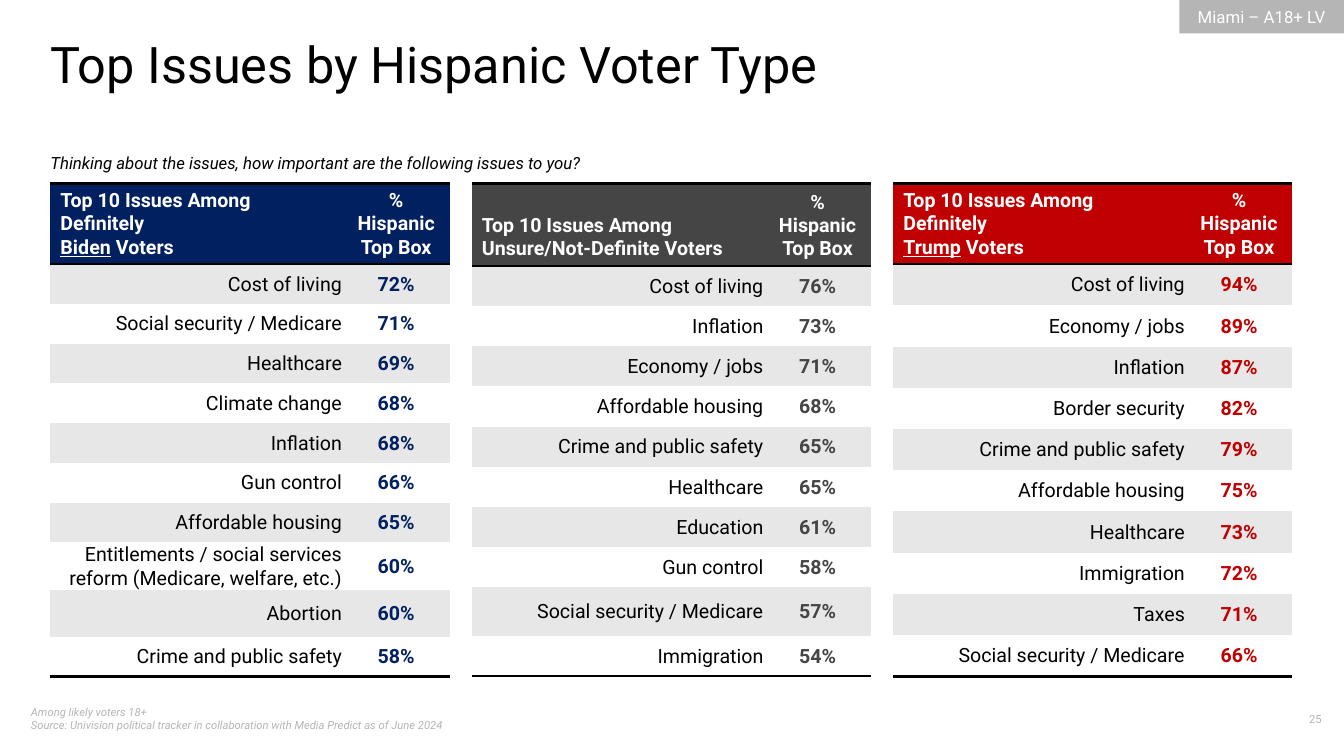
from lxml import etree
from pptx import Presentation
from pptx.dml.color import RGBColor
from pptx.enum.shapes import MSO_SHAPE
from pptx.enum.text import MSO_ANCHOR, PP_ALIGN
from pptx.oxml.ns import qn
from pptx.util import Cm, Pt

LEFT, CENTER, RIGHT = PP_ALIGN.LEFT, PP_ALIGN.CENTER, PP_ALIGN.RIGHT
MIDDLE, BOTTOM = MSO_ANCHOR.MIDDLE, MSO_ANCHOR.BOTTOM
RECTANGLE = MSO_SHAPE.RECTANGLE
FONT = "Roboto"
NO_GRID_STYLE = "{2D5ABB26-0587-4C30-8999-92F81FD0307C}"
COLORS = {
    "black": "000000", "white": "FFFFFF", "band": "E7E7E7", "muted": "B5B5B5",
    "biden": "002060", "unsure": "454545", "trump": "C00000",
}

TAG = "Miami – A18+ LV"
TITLE = "Top Issues by Hispanic Voter Type"
QUESTION = "Thinking about the issues, how important are the following issues to you?"
FOOTNOTE = [
    "Among likely voters 18+",
    "Source: Univision political tracker in collaboration with Media Predict as of June 2024",
]
PAGE_NUMBER = "25"
SHARE_HEADING = ["% Hispanic", "Top Box"]

# "heights" holds the rows with a height of their own; the others share the rest.
GROUPS = [
    {
        "color": "biden",
        "heading": "Top 10 Issues Among Definitely",
        "candidate": "Biden",
        "heights": {0: 2.03, 8: 1.2, 9: 1.17},
        "issues": [
            ("Cost of living", "72%"),
            ("Social security / Medicare", "71%"),
            ("Healthcare", "69%"),
            ("Climate change", "68%"),
            ("Inflation", "68%"),
            ("Gun control", "66%"),
            ("Affordable housing", "65%"),
            ("Entitlements / social services reform (Medicare, welfare, etc.)", "60%"),
            ("Abortion", "60%"),
            ("Crime and public safety", "58%"),
        ],
    },
    {
        "color": "unsure",
        "heading": "Top 10 Issues Among Unsure/Not-Definite Voters",
        "candidate": None,
        "heights": {0: 2.08, 9: 1.22},
        "issues": [
            ("Cost of living", "76%"),
            ("Inflation", "73%"),
            ("Economy / jobs", "71%"),
            ("Affordable housing", "68%"),
            ("Crime and public safety", "65%"),
            ("Healthcare", "65%"),
            ("Education", "61%"),
            ("Gun control", "58%"),
            ("Social security / Medicare", "57%"),
            ("Immigration", "54%"),
        ],
    },
    {
        "color": "trump",
        "heading": "Top 10 Issues Among Definitely",
        "candidate": "Trump",
        "heights": {0: 2.03},
        "issues": [
            ("Cost of living", "94%"),
            ("Economy / jobs", "89%"),
            ("Inflation", "87%"),
            ("Border security", "82%"),
            ("Crime and public safety", "79%"),
            ("Affordable housing", "75%"),
            ("Healthcare", "73%"),
            ("Immigration", "72%"),
            ("Taxes", "71%"),
            ("Social security / Medicare", "66%"),
        ],
    },
]

TABLE_LEFT, TABLE_TOP, TABLE_HEIGHT = 1.27, 4.62, 12.42
COLUMN_WIDTHS = (7.37, 2.69)
TABLE_GAP = 0.56


def rgb(name):
    return RGBColor.from_string(COLORS[name])


def add_span(para, text, size, color, bold=False, italic=False, underline=False):
    span = para.add_run()
    span.text = text
    font = span.font
    font.name, font.size = FONT, Pt(size)
    font.bold, font.italic, font.underline = bold, italic, underline
    font.color.rgb = rgb(color)


def add_text(page, place, lines, size, color, align=LEFT, italic=False, inset=True):
    box = page.shapes.add_textbox(*map(Cm, place))
    frame = box.text_frame
    frame.word_wrap = True
    if not inset:
        frame.margin_left = frame.margin_right = 0
        frame.margin_top = frame.margin_bottom = 0
    para = frame.paragraphs[0]
    para.alignment = align
    for number, line in enumerate(lines):
        if number:
            para.add_line_break()
        add_span(para, line, size, color, italic=italic)


def add_tag(page):
    tag = page.shapes.add_shape(RECTANGLE, Cm(29.72), 0, Cm(4.15), Cm(0.84))
    tag.shadow.inherit = False
    tag.fill.solid()
    tag.fill.fore_color.rgb = rgb("muted")
    tag.line.fill.background()
    frame = tag.text_frame
    frame.vertical_anchor = MIDDLE
    para = frame.paragraphs[0]
    para.alignment = CENTER
    add_span(para, TAG, 12, "white")


def fill_cell(cell, paragraphs, align, anchor, background, borders):
    """Write paragraphs of (text, style) spans; borders names the sides to rule."""
    properties = cell._tc.get_or_add_tcPr()
    for side in borders:
        line = etree.SubElement(properties, qn(f"a:{side}"), w=str(Pt(2)))
        paint = etree.SubElement(line, qn("a:solidFill"))
        etree.SubElement(paint, qn("a:srgbClr"), val=COLORS["black"])
    cell.fill.solid()
    cell.fill.fore_color.rgb = rgb(background)
    cell.vertical_anchor = anchor
    frame = cell.text_frame
    for number, spans in enumerate(paragraphs):
        para = frame.add_paragraph() if number else frame.paragraphs[0]
        para.alignment = align
        for text, style in spans:
            add_span(para, text, 14, **style)


def add_issue_table(page, left, group):
    issues, color, heights = group["issues"], group["color"], group["heights"]
    row_count = len(issues) + 1
    shared = (TABLE_HEIGHT - sum(heights.values())) / (row_count - len(heights))
    holder = page.shapes.add_table(row_count, 2, Cm(left), Cm(TABLE_TOP),
                                   Cm(sum(COLUMN_WIDTHS)), Cm(TABLE_HEIGHT))
    next(holder.element.iter(qn("a:tableStyleId"))).text = NO_GRID_STYLE
    table = holder.table
    table.horz_banding = False
    for column, width in zip(table.columns, COLUMN_WIDTHS):
        column.width = Cm(width)
    for number, row in enumerate(table.rows):
        row.height = Cm(heights.get(number, shared))

    heading_style = {"color": "white", "bold": True}
    heading = [[(group["heading"], heading_style)]]
    if group["candidate"]:
        heading.append([(group["candidate"], {**heading_style, "underline": True}),
                        (" Voters", heading_style)])
    share_heading = [[(line, heading_style)] for line in SHARE_HEADING]
    for column, (paragraphs, align) in enumerate([(heading, LEFT), (share_heading, CENTER)]):
        fill_cell(table.cell(0, column), paragraphs, align, BOTTOM, color, ("lnT", "lnB"))

    for number, (issue, share) in enumerate(issues, start=1):
        background = "band" if number % 2 else "white"
        borders = ("lnB",) if number == len(issues) else ()
        entries = [(issue, {"color": "black"}, RIGHT),
                   (share, {"color": color, "bold": True}, CENTER)]
        for column, (text, style, align) in enumerate(entries):
            cell = table.cell(number, column)
            cell.margin_left = cell.margin_right = cell.margin_top = Cm(0.02)
            cell.margin_bottom = 0
            fill_cell(cell, [[(text, style)]], align, MIDDLE, background, borders)


def main():
    deck = Presentation()
    deck.slide_width, deck.slide_height = Cm(33.87), Cm(19.05)
    page = deck.slides.add_slide(deck.slide_layouts[6])
    add_tag(page)
    add_text(page, (0.53, 17.65, 12.98, 1.02), FOOTNOTE, 8, "muted", italic=True)
    add_text(page, (31.32, 17.83, 2.24, 0.69), [PAGE_NUMBER], 8, "muted", RIGHT)
    add_text(page, (1.27, 0.84, 30.48, 1.55), [TITLE], 36, "black", inset=False)
    add_text(page, (1.27, 3.86, 27.97, 0.51), [QUESTION], 12, "black",
             italic=True, inset=False)
    for number, group in enumerate(GROUPS):
        add_issue_table(page, TABLE_LEFT + number * (sum(COLUMN_WIDTHS) + TABLE_GAP), group)
    deck.save("out.pptx")


if __name__ == "__main__":
    main()
